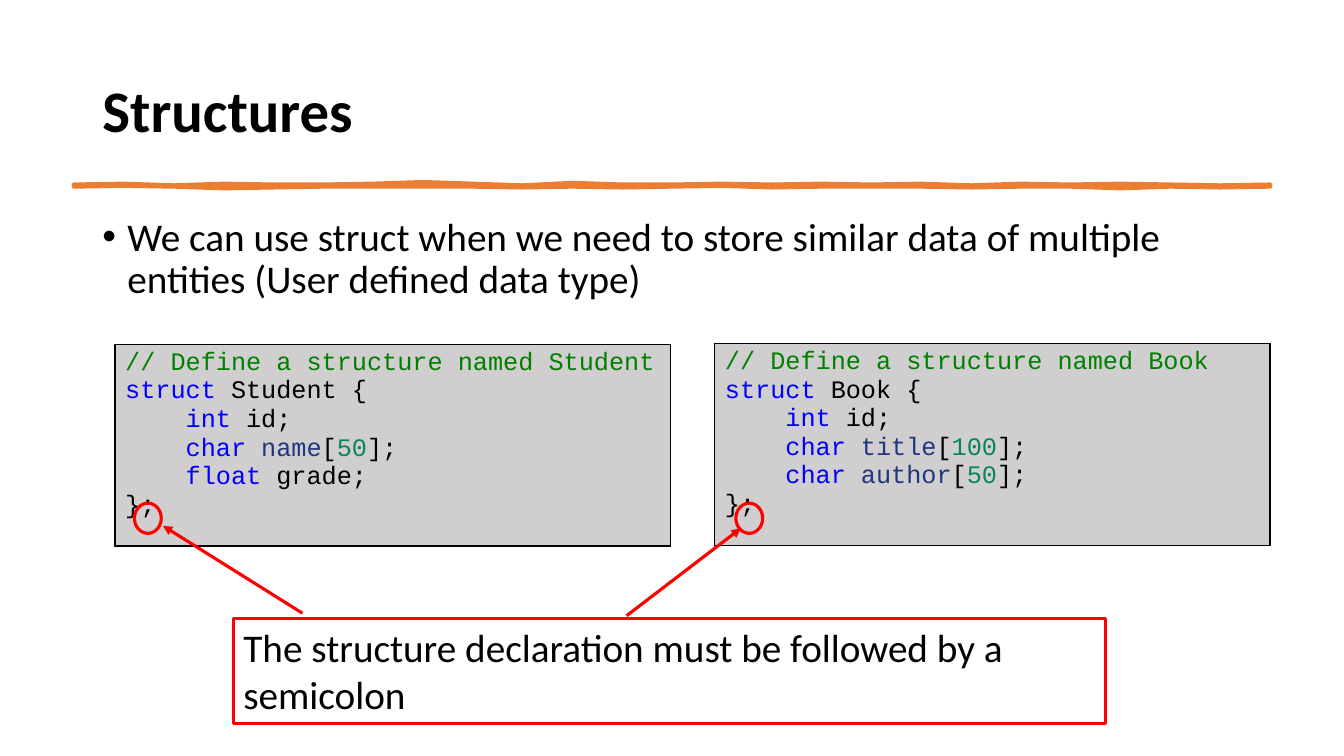
from lxml import etree
from pptx import Presentation, util as u
from pptx.dml.color import RGBColor
from pptx.enum import shapes, text
from pptx.oxml import ns

BLACK, RED, ORANGE, GREY = "000000", "FF0000", "ED7D31", "D0CECE"
COMMENT, KEYWORD, FIELD, NUMBER = "008000", "0000FF", "1F377F", "098658"


def color(hex_code):
    return RGBColor.from_string(hex_code)


def add_xml(parent, tag, **attributes):
    return etree.SubElement(parent, ns.qn(tag), attributes)


def struct_lines(name, fields):
    """Return (indented, runs) per code line; a run is (words, colour)."""
    lines = [(False, [(f"// Define a structure named {name}", COMMENT)]),
             (False, [("struct", KEYWORD), (f" {name} {{", BLACK)])]
    for kind, field, size in fields:
        runs = [(f"{kind} ", KEYWORD)]
        if size:
            runs += [(field, FIELD), ("[", BLACK), (size, NUMBER), ("];", BLACK)]
        else:
            runs.append((f"{field};", BLACK))
        lines.append((True, runs))
    return lines + [(False, [("};", BLACK)])]


class LessonSlide:
    """Places elements on a grid of 16 columns by 9 rows."""
    body_font, code_font = "Calibri", "Courier New"
    body_size, code_size = 28, 18
    stroke = 2.25

    def __init__(self, deck):
        self.unit = deck.slide_width / 16
        self.slide = deck.slides.add_slide(deck.slide_layouts[5])

    def grid(self, *lengths):
        return [u.Emu(round(length * self.unit)) for length in lengths]

    def style_run(self, run, font, size, hex_code, bold=False):
        run.font.name, run.font.size, run.font.bold = font, u.Pt(size), bold
        run.font.color.rgb = color(hex_code)

    def set_words(self, shape, words, size, bold=False,
                  anchor=text.MSO_ANCHOR.TOP):
        frame = shape.text_frame
        frame.text = words
        frame.word_wrap = True
        frame.auto_size = text.MSO_AUTO_SIZE.NONE
        frame.vertical_anchor = anchor
        paragraph = frame.paragraphs[0]
        paragraph.alignment = text.PP_ALIGN.LEFT
        self.style_run(paragraph.runs[0], self.body_font, size, BLACK, bold)
        return paragraph

    def outline(self, shape, hex_code, width):
        shape.line.color.rgb = color(hex_code)
        shape.line.width = u.Pt(width)

    def title(self, words, *box):
        title = self.slide.shapes.title
        title.left, title.top, title.width, title.height = self.grid(*box)
        heading = self.set_words(title, words, 42, True, text.MSO_ANCHOR.MIDDLE)
        heading.line_spacing = 0.9

    def brush_line(self, left, top, width, upper, lower):
        """Draw a rough stroke; edge offsets are in hundredths of a column."""
        step = width / (len(upper) - 1)
        edges = [[self.grid(left + i * step, top + offset / 100)
                  for i, offset in enumerate(edge)] for edge in (upper, lower)]
        points = edges[0] + edges[1][::-1]
        builder = self.slide.shapes.build_freeform(*points[0])
        builder.add_line_segments(points[1:], close=True)
        brush = builder.convert_to_shape()
        brush.shadow.inherit = False
        brush.fill.solid()
        brush.fill.fore_color.rgb = color(ORANGE)
        self.outline(brush, ORANGE, 3.25)
        add_xml(brush._element.spPr.get_or_add_ln(), "a:round")

    def bullet(self, words, *box):
        point = self.set_words(self.slide.shapes.add_textbox(*self.grid(*box)),
                               words, self.body_size)
        point.line_spacing, point.space_before = 0.9, u.Pt(10)
        properties = point._p.get_or_add_pPr()
        indent = u.Inches(0.25)
        properties.set("marL", str(indent))
        properties.set("indent", str(-indent))
        add_xml(properties, "a:buFont", typeface="Arial")
        add_xml(properties, "a:buChar", char="•")

    def code_table(self, lines, *box):
        table = self.slide.shapes.add_table(1, 1, *self.grid(*box)).table
        table.first_row = table.horz_banding = False
        cell = table.cell(0, 0)
        cell.fill.solid()
        cell.fill.fore_color.rgb = color(GREY)
        self.border(cell)
        for number, (indented, runs) in enumerate(lines):
            frame = cell.text_frame
            line = frame.add_paragraph() if number else frame.paragraphs[0]
            if indented:
                four_letters = u.Pt(4 * 0.6 * self.code_size)
                line._p.get_or_add_pPr().set("marL", str(four_letters))
            for words, hex_code in runs:
                run = line.add_run()
                run.text = words
                self.style_run(run, self.code_font, self.code_size, hex_code)

    def border(self, cell):
        properties = cell._tc.get_or_add_tcPr()
        for place, side in enumerate("LRTB"):
            edge = add_xml(properties, f"a:ln{side}", w=str(u.Pt(1)))
            add_xml(add_xml(edge, "a:solidFill"), "a:srgbClr", val=BLACK)
            properties.insert(place, edge)

    def marker(self, preset, *box):
        marker = self.slide.shapes.add_shape(preset, *self.grid(*box))
        marker.shadow.inherit = False
        marker.fill.background()
        self.outline(marker, RED, self.stroke)
        return marker

    def callout(self, words, *box):
        note = self.marker(shapes.MSO_SHAPE.RECTANGLE, *box)
        self.set_words(note, words, self.body_size)

    def arrow(self, *ends):
        arrow = self.slide.shapes.add_connector(
            shapes.MSO_CONNECTOR.STRAIGHT, *self.grid(*ends))
        self.outline(arrow, RED, self.stroke)
        properties = arrow._element.spPr
        add_xml(properties.get_or_add_ln(), "a:tailEnd", type="triangle")
        add_xml(properties, "a:effectLst")


def main():
    deck = Presentation()
    deck.slide_width, deck.slide_height = u.Emu(12192000), u.Emu(6858000)
    lesson = LessonSlide(deck)
    lesson.title("Structures", 1.1, 0.48, 13.8, 1.74)
    lesson.brush_line(
        0.88, 2.2, 14.24,
        [0, -1, 1, -1, 0, 0, -1, -3, -1, 1, -2, 0, 0,
         -1, 0, -1, 0, -1, 1, -1, 0, -1, 0, 1, 0],
        [2, 1, 2, 4, 3, 2, 2, 2, 2, 3, 2, 3, 2,
         1, 3, 2, 2, 2, 3, 2, 2, 4, 2, 3, 2])
    lesson.bullet("We can use struct when we need to store similar data of "
                  "multiple entities (User defined data type)",
                  1.1, 2.53, 13.8, 1.24)
    student = [("int", "id", ""), ("char", "name", "50"), ("float", "grade", "")]
    book = [("int", "id", ""), ("char", "title", "100"), ("char", "author", "50")]
    for name, fields, left, top in (("Student", student, 1.37, 4.1),
                                    ("Book", book, 8.51, 4.09)):
        lesson.code_table(struct_lines(name, fields), left, top, 6.61, 2.4)
    lesson.callout("The structure declaration must be followed by a semicolon",
                   2.78, 7.36, 10.38, 1.25)
    for semicolon_left in (1.6, 8.76):
        lesson.marker(shapes.MSO_SHAPE.OVAL, semicolon_left, 5.99, 0.32, 0.36)
    lesson.arrow(3.6, 7.3, 1.94, 6.26)
    lesson.arrow(7.46, 7.33, 8.82, 6.29)
    deck.save("out.pptx")


if __name__ == "__main__":
    main()
